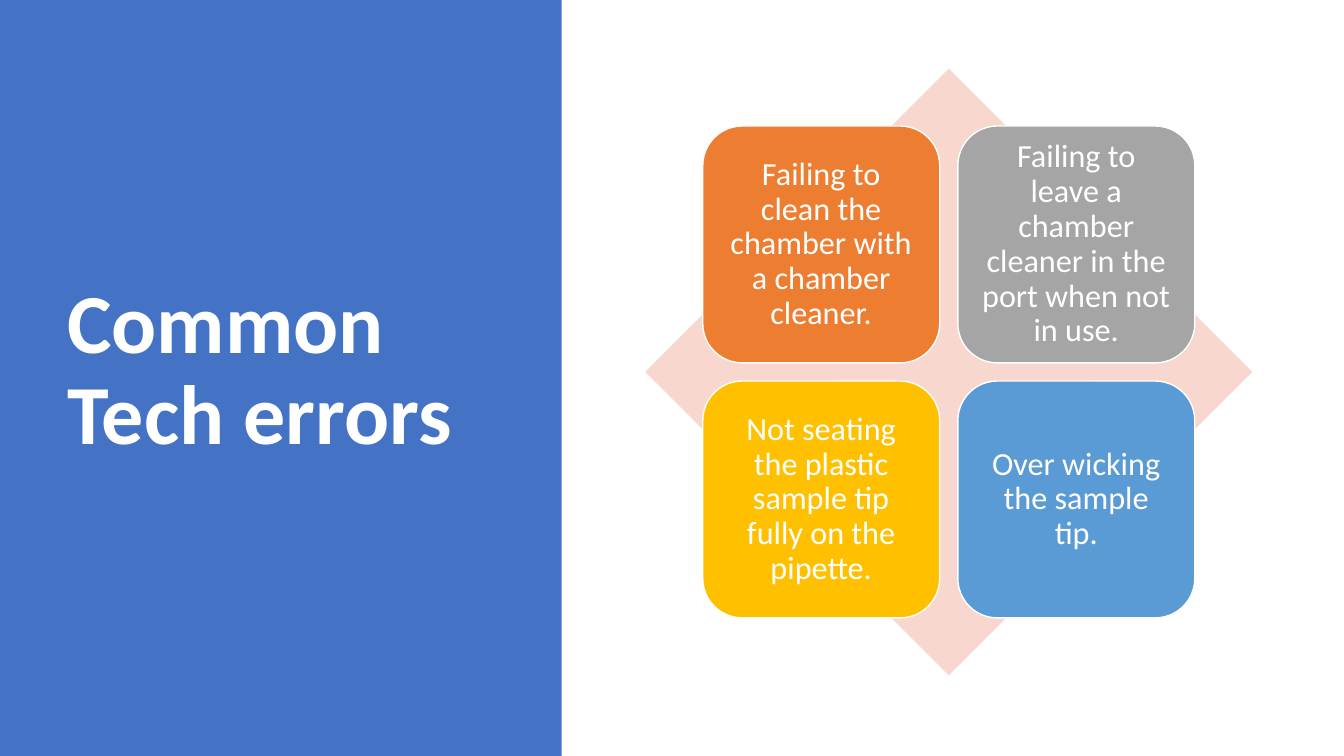
import pptx
import pptx.dml.color
import pptx.enum.shapes
import pptx.enum.text
import pptx.util

PX = 9144
FONT = "Calibri"
COLORS = {
    "panel": "4472C4",
    "diamond": "F8D7CE",
    "orange": "ED7D31",
    "gray": "A5A5A5",
    "gold": "FFC000",
    "blue": "5B9BD5",
    "white": "FFFFFF",
}
ERRORS = [
    ("Failing to clean the chamber with a chamber cleaner.", "orange"),
    ("Failing to leave a chamber cleaner in the port when not in use.", "gray"),
    ("Not seating the plastic sample tip fully on the pipette.", "gold"),
    ("Over wicking the sample tip.", "blue"),
]
SHAPES = pptx.enum.shapes.MSO_SHAPE
ALIGN = pptx.enum.text.PP_ALIGN


def color(name):
    return pptx.dml.color.RGBColor.from_string(COLORS[name])


def to_emu(box):
    return [length * PX for length in box]


def add_block(page, kind, box, fill, line=None):
    block = page.shapes.add_shape(kind, *to_emu(box))
    block.shadow.inherit = False
    block.fill.solid()
    block.fill.fore_color.rgb = color(fill)
    if line:
        block.line.color.rgb = color(line)
        block.line.width = pptx.util.Pt(1)
    else:
        block.line.fill.background()
    return block


def write(shape, text, size, align, bold=False):
    frame = shape.text_frame
    frame.word_wrap = True
    frame.vertical_anchor = pptx.enum.text.MSO_ANCHOR.MIDDLE
    frame.text = text
    para = frame.paragraphs[0]
    para.alignment = align
    para.line_spacing = 0.9
    font = para.runs[0].font
    font.name = FONT
    font.size = pptx.util.Pt(size)
    font.bold = bold
    font.color.rgb = color("white")


def add_title_panel(page, box):
    left, top, width, height = box
    add_block(page, SHAPES.RECTANGLE, box, "panel")
    title_box = (left + 57, top + 68, width - 141, height - 148)
    title = page.shapes.add_textbox(*to_emu(title_box))
    write(title, "Common Tech errors", 60, ALIGN.LEFT, bold=True)


def add_error_matrix(page, box):
    left, top, width, height = box
    add_block(page, SHAPES.DIAMOND, box, "diamond")
    margin, tile_size, gap = 57, 235, 18
    for index, (text, fill) in enumerate(ERRORS):
        row, column = divmod(index, 2)
        tile_left = left + margin + column * (tile_size + gap)
        tile_top = top + margin + row * (tile_size + gap)
        tile_box = (tile_left, tile_top, tile_size, tile_size)
        tile = add_block(page, SHAPES.ROUNDED_RECTANGLE, tile_box, fill, "white")
        frame = tile.text_frame
        frame.margin_left = frame.margin_right = 10 * PX
        frame.margin_top = frame.margin_bottom = 10 * PX
        write(tile, text, 23, ALIGN.CENTER)


def main():
    deck = pptx.Presentation()
    deck.slide_width, deck.slide_height = to_emu((1333, 750))
    page = deck.slides.add_slide(deck.slide_layouts[6])
    add_title_panel(page, (0, 0, 557, 750))
    add_error_matrix(page, (640, 68, 602, 602))
    deck.save("out.pptx")


if __name__ == "__main__":
    main()
